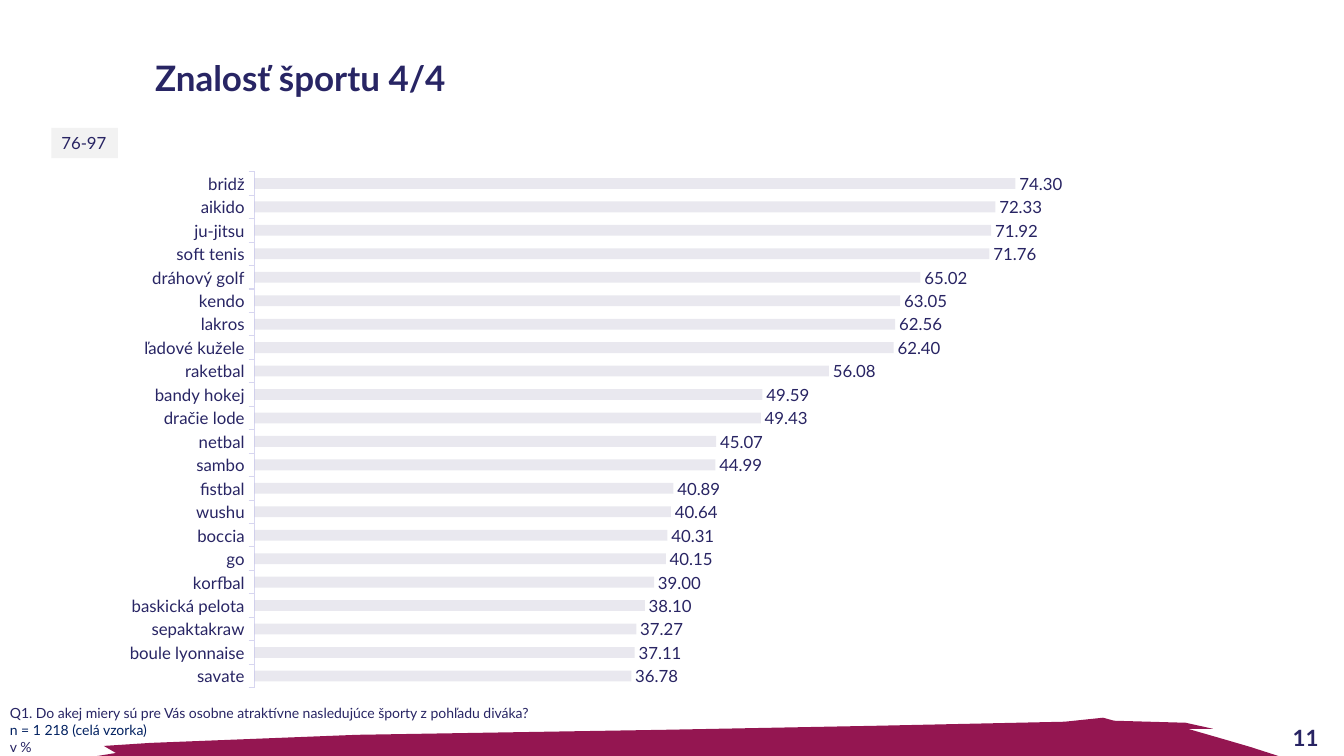
from dataclasses import dataclass
from typing import Optional

from lxml import etree
from pptx import Presentation
from pptx.chart.data import CategoryChartData
from pptx.dml.color import RGBColor
from pptx.enum.chart import XL_CHART_TYPE, XL_LABEL_POSITION, XL_TICK_MARK
from pptx.enum.text import MSO_ANCHOR, PP_ALIGN
from pptx.oxml import parse_xml
from pptx.oxml.ns import nsdecls, qn
from pptx.slide import Slide
from pptx.text.text import Font
from pptx.util import Inches, Pt

BAR_CLUSTERED = XL_CHART_TYPE.BAR_CLUSTERED
OUTSIDE_END = XL_LABEL_POSITION.OUTSIDE_END
TICK_OUTSIDE = XL_TICK_MARK.OUTSIDE
TOP, MIDDLE = MSO_ANCHOR.TOP, MSO_ANCHOR.MIDDLE
LEFT, CENTER = PP_ALIGN.LEFT, PP_ALIGN.CENTER


@dataclass(frozen=True)
class Theme:
    font: str = "Lato"
    navy: str = "282564"
    label_navy: str = "282463"
    sample_blue: str = "002060"
    axis_line: str = "D7D6F0"
    tag_fill: str = "F2F2F2"
    brush: str = "941651"
    title_size: int = 25
    number_size: int = 16
    body_size: int = 12
    note_size: int = 10


THEME = Theme()


@dataclass(frozen=True)
class Line:
    text: str
    color: str


@dataclass(frozen=True)
class TextBlock:
    box: tuple[float, float, float, float]
    lines: list[Line]
    size: int
    bold: bool = False
    anchor: MSO_ANCHOR = TOP
    align: PP_ALIGN = LEFT
    wrap: bool = False
    spacing: Optional[float] = None
    fill: Optional[str] = None


TEXT_BLOCKS = [
    TextBlock((1.44, 0.28, 9.78, 1.04), [Line("Znalosť športu 4/4", THEME.navy)],
              THEME.title_size, bold=True, anchor=MIDDLE, wrap=True, spacing=0.9),
    TextBlock((12.56, 7.14, 0.78, 0.36), [Line("11", THEME.label_navy)],
              THEME.number_size, bold=True, anchor=MIDDLE, align=CENTER, wrap=True),
    TextBlock((0, 6.94, 5.34, 0.61), [
        Line("Q1. Do akej miery sú pre Vás osobne atraktívne nasledujúce športy z pohľadu diváka?",
             THEME.navy),
        Line("n = 1 218 (celá vzorka)", THEME.sample_blue),
        Line("v %", THEME.navy),
    ], THEME.note_size),
    TextBlock((0.51, 1.27, 0.66, 0.3), [Line("76-97", THEME.label_navy)],
              THEME.body_size, fill=THEME.tag_fill),
]

SPORTS = {
    "bridž": 74.3, "aikido": 72.33, "ju-jitsu": 71.92, "soft tenis": 71.76,
    "dráhový golf": 65.02, "kendo": 63.05, "lakros": 62.56, "ľadové kužele": 62.4,
    "raketbal": 56.08, "bandy hokej": 49.59, "dračie lode": 49.43, "netbal": 45.07,
    "sambo": 44.99, "fistbal": 40.89, "wushu": 40.64, "boccia": 40.31, "go": 40.15,
    "korfbal": 39, "baskická pelota": 38.1, "sepaktakraw": 37.27,
    "boule lyonnaise": 37.11, "savate": 36.78,
}
PLOT_AREA = {"x": 0.168, "y": 0.012, "w": 0.803, "h": 0.966}

# Brush stroke outline in hundredths of an inch, clockwise from its left tip
BRUSH_OUTLINE = [
    (84, 752), (115, 747), (103, 740), (149, 737), (354, 729), (660, 724), (869, 720),
    (1056, 716), (1094, 712), (1105, 715), (1176, 717), (1203, 723), (1178, 723),
    (1216, 734), (1240, 741), (1268, 750), (1235, 754), (1260, 759), (1125, 770),
    (724, 780), (404, 787), (182, 785), (115, 764), (135, 761),
]


def rgb(color: str) -> RGBColor:
    return RGBColor.from_string(color)


def style_font(font: Font, size: int, color: str, bold: bool = False) -> None:
    font.name = THEME.font
    font.size = Pt(size)
    font.bold = bold
    font.color.rgb = rgb(color)


def add_text(slide: Slide, block: TextBlock) -> None:
    area = slide.shapes.add_textbox(*(Inches(length) for length in block.box))
    if block.fill:
        area.fill.solid()
        area.fill.fore_color.rgb = rgb(block.fill)
    frame = area.text_frame
    frame.word_wrap = block.wrap
    frame.vertical_anchor = block.anchor
    frame.text = "\n".join(line.text for line in block.lines)
    for paragraph, line in zip(frame.paragraphs, block.lines):
        paragraph.alignment = block.align
        paragraph.line_spacing = block.spacing
        style_font(paragraph.font, block.size, line.color, block.bold)


def add_sports_chart(slide: Slide) -> None:
    data = CategoryChartData()
    data.categories = list(SPORTS)
    data.add_series("Series 1", list(SPORTS.values()))
    chart = slide.shapes.add_chart(BAR_CLUSTERED, Inches(0.4), Inches(1.64),
                                   Inches(12.65), Inches(5.3), data).chart
    chart.has_legend = False
    chart.has_title = False
    style_font(chart.font, THEME.body_size, THEME.navy)

    # Axes
    sport_axis, share_axis = chart.category_axis, chart.value_axis
    sport_axis.reverse_order = True
    sport_axis.major_tick_mark = TICK_OUTSIDE
    sport_axis.format.line.color.rgb = rgb(THEME.axis_line)
    sport_axis.format.line.width = Pt(0.75)
    style_font(sport_axis.tick_labels.font, THEME.body_size, THEME.navy)
    share_axis.minimum_scale, share_axis.maximum_scale = 0, 100
    share_axis.has_major_gridlines = False
    share_axis.visible = False

    # Bars at ten percent opacity
    plot = chart.plots[0]
    plot.gap_width, plot.overlap = 117, 100
    plot.vary_by_categories = False
    shares = plot.series[0]
    shares.invert_if_negative = False
    shares.format.fill.solid()
    shares.format.fill.fore_color.rgb = rgb(THEME.navy)
    bar_color = shares._element.find(".//" + qn("a:srgbClr"))
    etree.SubElement(bar_color, qn("a:alpha")).set("val", "10000")

    # Value labels
    labels = shares.data_labels
    labels.show_value = True
    labels.position = OUTSIDE_END
    labels.number_format = "#,##0.00"
    labels.number_format_is_linked = False
    style_font(labels.font, THEME.body_size, THEME.label_navy)

    # Fixed inner plot area
    modes = '<c:xMode val="edge"/><c:yMode val="edge"/>'
    sizes = "".join(f'<c:{key} val="{share}"/>' for key, share in PLOT_AREA.items())
    plot_area = chart._chartSpace.find(".//" + qn("c:plotArea"))
    for layout in plot_area.findall(qn("c:layout")):
        plot_area.remove(layout)
    plot_area.insert(0, parse_xml(
        f'<c:layout {nsdecls("c")}><c:manualLayout><c:layoutTarget val="inner"/>'
        f"{modes}{sizes}</c:manualLayout></c:layout>"))


def add_brush_stroke(slide: Slide) -> None:
    tip, *edge = BRUSH_OUTLINE
    builder = slide.shapes.build_freeform(*tip, scale=Inches(0.01))
    builder.add_line_segments(edge, close=True)
    stroke = builder.convert_to_shape()
    stroke.shadow.inherit = False
    stroke.fill.solid()
    stroke.fill.fore_color.rgb = rgb(THEME.brush)
    stroke.line.fill.background()


def main() -> None:
    deck = Presentation()
    deck.slide_width, deck.slide_height = Inches(13.33), Inches(7.5)
    slide = deck.slides.add_slide(deck.slide_layouts[6])
    add_sports_chart(slide)
    add_brush_stroke(slide)
    for block in TEXT_BLOCKS:
        add_text(slide, block)
    deck.save("out.pptx")


if __name__ == "__main__":
    main()
